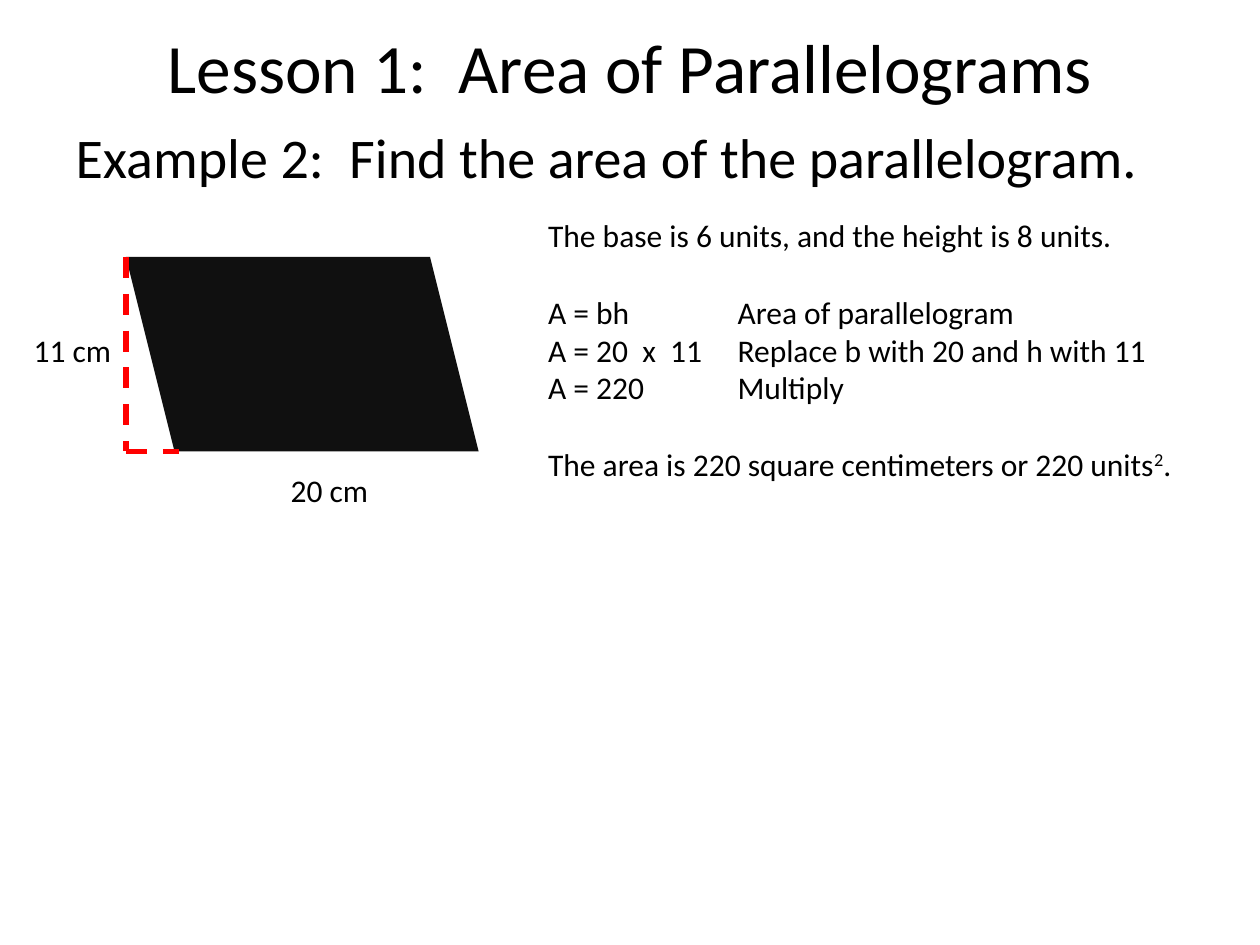
from lxml import etree
from pptx import Presentation
from pptx.dml import color
from pptx.enum import dml, shapes, text
from pptx.oxml import ns
from pptx.util import Cm, Pt

COLORS = {"ink": "000000", "figure": "101010", "height": "FF0000"}
FONT = "Calibri"
LEFT, TOP, BOTTOM = 2.54, 5.18, 9.1
BLANK_LINE = 22


def rgb(name):
    return color.RGBColor.from_string(COLORS[name])


def place(box, left, top, width, height):
    box.left, box.top, box.width, box.height = map(Cm, (left, top, width, height))


def write(paragraph, words, size=18, raised=False):
    run = paragraph.add_run()
    run.text = words
    run.font.name = FONT
    run.font.size = Pt(size)
    run.font.color.rgb = rgb("ink")
    if raised:
        run._r.get_or_add_rPr().set("baseline", "30000")


def add_tab_stop(paragraph, position):
    stops = etree.SubElement(paragraph._p.get_or_add_pPr(), ns.qn("a:tabLst"))
    etree.SubElement(stops, ns.qn("a:tab"), pos=str(Cm(position)), algn="l")


def fill_heading(slide):
    title = slide.shapes.title
    place(title, 1.27, 0.43, 22.86, 1.78)
    title.text_frame.auto_size = text.MSO_AUTO_SIZE.NONE
    title.text_frame.vertical_anchor = text.MSO_ANCHOR.MIDDLE
    heading = title.text_frame.paragraphs[0]
    heading.alignment = text.PP_ALIGN.CENTER
    write(heading, "Lesson 1:  Area of Parallelograms", size=39.6)


def fill_example(slide):
    body = slide.placeholders[1]
    place(body, 1.27, 2.34, 22.86, 14.68)
    example = body.text_frame.paragraphs[0]
    properties = example._p.get_or_add_pPr()
    properties.set("marL", "0")
    properties.set("indent", "0")
    etree.SubElement(properties, ns.qn("a:buNone"))
    write(example, "Example 2:  Find the area of the parallelogram.", size=32)


def add_parallelogram(slide):
    figure = slide.shapes.add_shape(
        shapes.MSO_SHAPE.PARALLELOGRAM, Cm(LEFT), Cm(TOP), Cm(7.11), Cm(BOTTOM - TOP))
    figure._element.spPr.xfrm.set("flipH", "1")
    figure.shadow.inherit = False
    figure.fill.solid()
    figure.fill.fore_color.rgb = rgb("figure")
    figure.line.fill.background()


def add_dashed_line(slide, end_x, start_y):
    dashed = slide.shapes.add_connector(
        shapes.MSO_CONNECTOR.STRAIGHT, Cm(LEFT), Cm(start_y), Cm(end_x), Cm(BOTTOM))
    dashed.line.color.rgb = rgb("height")
    dashed.line.width = Pt(3)
    dashed.line.dash_style = dml.MSO_LINE.DASH
    etree.SubElement(dashed._element.spPr, ns.qn("a:effectLst"))


def add_text_box(slide, left, top, width, height):
    box = slide.shapes.add_textbox(Cm(left), Cm(top), Cm(width), Cm(height))
    box.text_frame.word_wrap = True
    return box.text_frame


def add_label(slide, words, left, top, width):
    label = add_text_box(slide, left, top, width, 1.03)
    write(label.paragraphs[0], words)


def add_solution(slide):
    solution = add_text_box(slide, 10.8, 4.24, 13.54, 5.64)
    write(solution.paragraphs[0], "The base is 6 units, and the height is 8 units.")
    steps = [
        ("A = bh", "Area of parallelogram"),
        ("A = 20  x  11", "Replace b with 20 and h with 11"),
        ("A = 220", "Multiply"),
    ]
    for index, step in enumerate(steps):
        line = solution.add_paragraph()
        line.space_before = Pt(0 if index else BLANK_LINE)
        add_tab_stop(line, 3.82)
        write(line, "\t".join(step))
    answer = solution.add_paragraph()
    answer.space_before = Pt(BLANK_LINE)
    write(answer, "The area is 220 square centimeters or 220 units")
    write(answer, "2", raised=True)
    write(answer, ".")


def main():
    deck = Presentation()
    deck.slide_width, deck.slide_height = Cm(25.4), Cm(19.05)
    slide = deck.slides.add_slide(deck.slide_layouts[1])
    fill_heading(slide)
    fill_example(slide)
    add_parallelogram(slide)
    add_dashed_line(slide, end_x=LEFT, start_y=TOP)
    add_solution(slide)
    add_dashed_line(slide, end_x=3.6, start_y=BOTTOM)
    add_label(slide, "20 cm", 5.61, 9.37, 2.34)
    add_label(slide, "11 cm", 0.43, 6.55, 2.12)
    deck.save("out.pptx")


if __name__ == "__main__":
    main()
